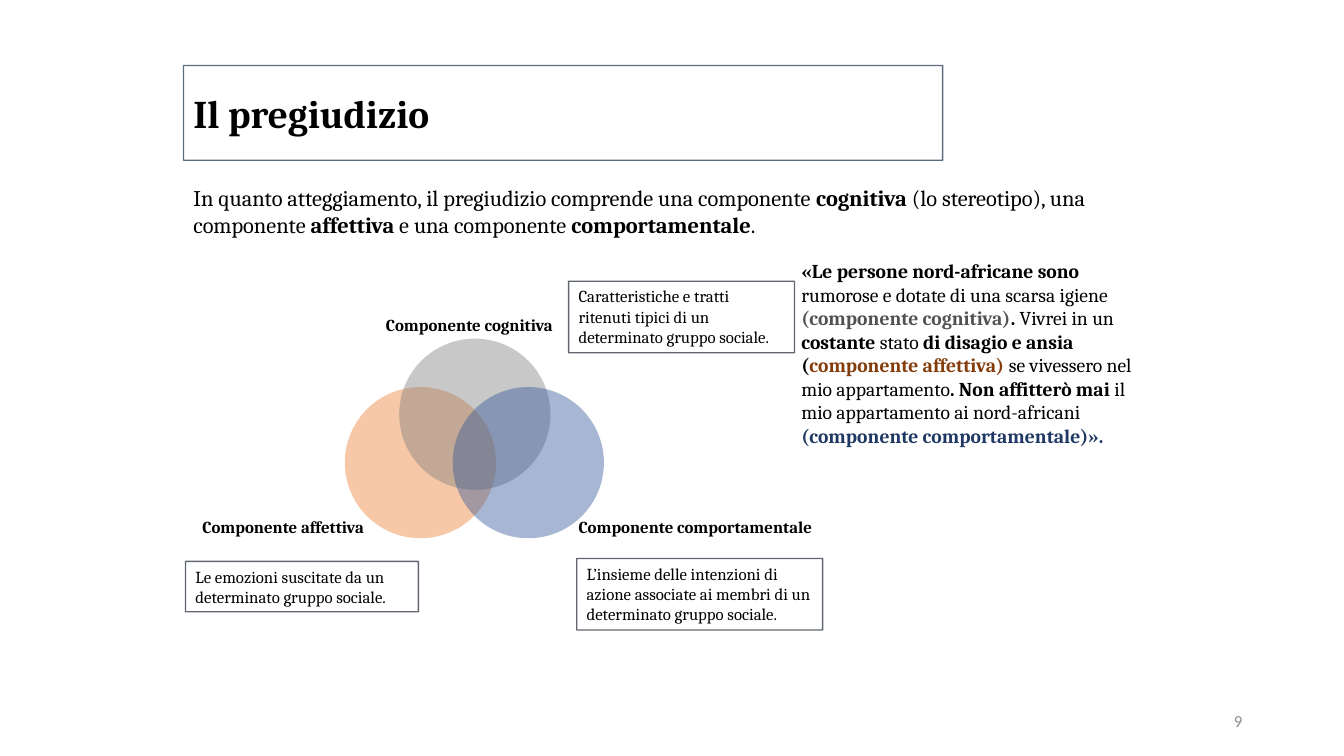
from lxml import etree
from pptx import Presentation
from pptx.dml.color import RGBColor
from pptx.enum import shapes, text
from pptx.oxml import ns
from pptx.util import Inches, Pt

BLACK = RGBColor(0x00, 0x00, 0x00)
SLATE = RGBColor(0x44, 0x54, 0x6A)
NAVY = RGBColor(0x22, 0x2A, 0x35)
ORANGE = RGBColor(0xED, 0x7D, 0x31)
GRAY = RGBColor(0x7C, 0x7C, 0x7C)
BLUE = RGBColor(0x2F, 0x55, 0x97)
DARK_GRAY = RGBColor(0x52, 0x52, 0x52)
BROWN = RGBColor(0x84, 0x3C, 0x0B)
DARK_BLUE = RGBColor(0x20, 0x38, 0x64)
PAGE_GRAY = RGBColor(0x8C, 0x8C, 0x8C)

deck = Presentation()
deck.slide_width, deck.slide_height = Inches(13.33), Inches(7.5)
page = deck.slides.add_slide(deck.slide_layouts[6])


def write(box, size, spans, wrap=True, font="Cambria"):
    """Fill a box with one left-aligned paragraph of (words, bold, colour) spans."""
    frame = box.text_frame
    frame.word_wrap = wrap
    para = frame.paragraphs[0]
    para.alignment = text.PP_ALIGN.LEFT
    for words, bold, color in spans:
        span = para.add_run()
        span.text = words
        span.font.name, span.font.size = font, Pt(size)
        span.font.bold, span.font.color.rgb = bold, color
    return frame


def add_figure(kind, place, color, opacity, filled):
    """Add a shape with either a translucent fill or a translucent outline."""
    figure = page.shapes.add_shape(kind, *map(Inches, place))
    figure.shadow.inherit = False
    if filled:
        figure.fill.solid()
        figure.fill.fore_color.rgb = color
        figure.line.fill.background()
    else:
        figure.fill.background()
        figure.line.color.rgb = color
        figure.line.width = Pt(1)
    tint = next(figure._element.spPr.iter(ns.qn("a:srgbClr")))
    etree.SubElement(tint, ns.qn("a:alpha"), val=str(opacity * 1000))
    return figure


# Page number
number = page.shapes.add_textbox(Inches(9.42), Inches(6.95), Inches(3), Inches(0.4))
frame = write(number, 12, [("9", False, PAGE_GRAY)], font="Calibri")
frame.vertical_anchor = text.MSO_ANCHOR.MIDDLE
frame.paragraphs[0].alignment = text.PP_ALIGN.RIGHT

# Title
title = add_figure(shapes.MSO_SHAPE.RECTANGLE, (1.82, 0.65, 7.53, 0.94), SLATE, 86, False)
frame = write(title, 28, [("Il pregiudizio", True, BLACK)])
frame.vertical_anchor = text.MSO_ANCHOR.MIDDLE

# Introduction
intro = page.shapes.add_textbox(Inches(1.82), Inches(1.78), Inches(9.57), Inches(0.64))
write(intro, 16, [
    ("In quanto atteggiamento, il pregiudizio comprende una componente ", False, BLACK),
    ("cognitiva", True, BLACK),
    (" (lo stereotipo), una componente ", False, BLACK),
    ("affettiva", True, BLACK),
    (" e una componente ", False, BLACK),
    ("comportamentale", True, BLACK),
    (".", False, BLACK),
])

# Overlapping circles
for left, top, color in [(3.42, 3.84, ORANGE), (3.96, 3.36, GRAY), (4.49, 3.84, BLUE)]:
    add_figure(shapes.MSO_SHAPE.OVAL, (left, top, 1.5, 1.5), color, 42, True)

# Circle labels
for left, top, width, name in [
    (1.91, 5.08, 1.85, "affettiva"),
    (5.64, 5.08, 2.6, "comportamentale"),
    (3.73, 3.07, 1.92, "cognitiva"),
]:
    label = page.shapes.add_textbox(Inches(left), Inches(top), Inches(width), Inches(0.3))
    frame = write(label, 12, [("Componente " + name, True, BLACK)], wrap=False)
    frame.auto_size = text.MSO_AUTO_SIZE.SHAPE_TO_FIT_TEXT

# Framed definitions
for place, words in [
    ((5.64, 2.79, 2.24, 0.71),
     "Caratteristiche e tratti ritenuti tipici di un determinato gruppo sociale."),
    ((5.72, 5.54, 2.44, 0.71),
     "L’insieme delle intenzioni di azione associate ai membri di un determinato gruppo sociale."),
    ((1.84, 5.57, 2.31, 0.5),
     "Le emozioni suscitate da un determinato gruppo sociale."),
]:
    definition = add_figure(shapes.MSO_SHAPE.RECTANGLE, place, NAVY, 71, False)
    frame = write(definition, 12, [(words, False, BLACK)])
    frame.vertical_anchor = text.MSO_ANCHOR.TOP

# Example with its components coloured
example = page.shapes.add_textbox(Inches(7.85), Inches(2.52), Inches(3.67), Inches(1.99))
write(example, 14, [
    ("«Le persone nord-africane sono ", True, BLACK),
    ("rumorose e dotate di una scarsa igiene ", False, BLACK),
    ("(componente cognitiva)", True, DARK_GRAY),
    (". ", True, BLACK),
    ("Vivrei in un ", False, BLACK),
    ("costante ", True, BLACK),
    ("stato", False, BLACK),
    (" di disagio e ansia (", True, BLACK),
    ("componente affettiva) ", True, BROWN),
    ("se vivessero nel mio appartamento", False, BLACK),
    (". Non affitterò mai ", True, BLACK),
    ("il mio appartamento ai nord-africani ", False, BLACK),
    ("(componente comportamentale)».", True, DARK_BLUE),
])

deck.save("out.pptx")
